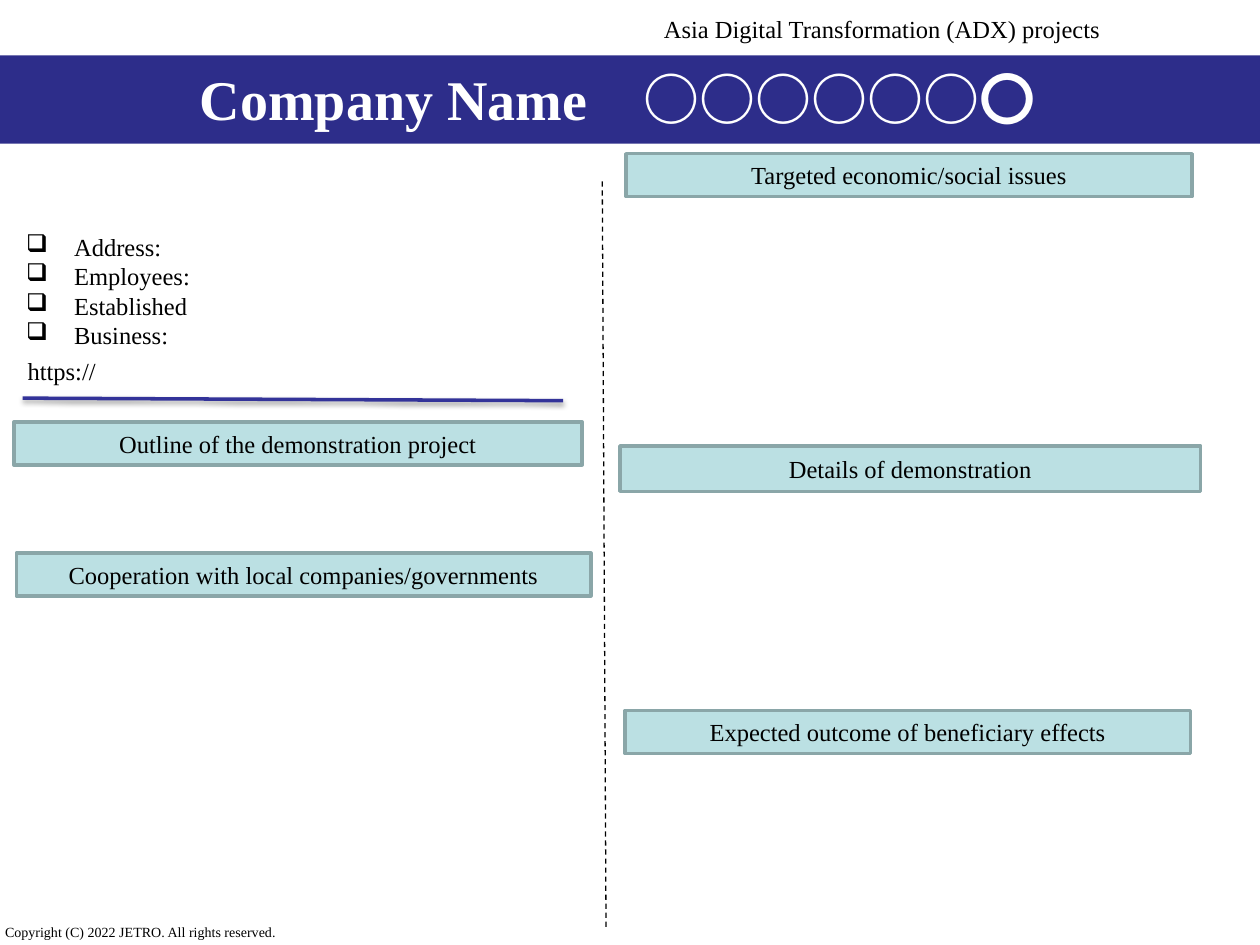
from lxml import etree
from pptx import Presentation
from pptx.dml.color import RGBColor
from pptx.enum import dml, shapes, text
from pptx.oxml.ns import qn
from pptx.util import Inches, Pt

COLORS = {"band": "2D2D8A", "rule": "333399", "box": "BBE0E3", "edge": "8AA6A8",
          "ink": "000000", "white": "FFFFFF"}
LATIN, CJK = "Times New Roman", "Noto Sans CJK JP"
HEADINGS = [
    ("Outline of the demonstration project", (0.11, 3.35, 4.51, 0.34)),
    ("Cooperation with local companies/governments", (0.13, 4.39, 4.56, 0.34)),
    ("Targeted economic/social issues", (4.97, 1.22, 4.49, 0.34)),
    ("Details of demonstration", (4.92, 3.54, 4.61, 0.36)),
    ("Expected outcome of beneficiary effects", (4.96, 5.64, 4.49, 0.34)),
]
FACTS = ["Address:", "Employees:", "Established", "Business:"]


def rgb(name):
    return RGBColor.from_string(COLORS[name])


def inches(box):
    return [Inches(v) for v in box]


def add_run(p, words, color="ink", **font):
    r = p.add_run()
    r.text = words
    r.font.color.rgb = rgb(color)
    for name, value in ({"name": LATIN, "size": Pt(14)} | font).items():
        setattr(r.font, name, value)
    return r


def add_text(s, box, lines, wrap=True, **font):
    tf = s.shapes.add_textbox(*inches(box)).text_frame
    tf.word_wrap = wrap
    for i, line in enumerate(lines):
        p = tf.add_paragraph() if i else tf.paragraphs[0]
        add_run(p, line, **font)
    return tf


def add_rect(s, box, fill):
    sp = s.shapes.add_shape(shapes.MSO_SHAPE.RECTANGLE, *inches(box))
    sp.shadow.inherit = False
    sp.fill.solid()
    sp.fill.fore_color.rgb = rgb(fill)
    return sp


def add_heading(s, box, words):
    sp = add_rect(s, box, "box")
    sp.line.color.rgb = rgb("edge")
    sp.line.width = Pt(2)
    p = sp.text_frame.paragraphs[0]
    p.alignment = text.PP_ALIGN.CENTER
    add_run(p, words)


def add_line(s, ends, color, width):
    """Return the line and its empty effect list."""
    line = s.shapes.add_connector(shapes.MSO_CONNECTOR.STRAIGHT, *inches(ends))
    line.line.color.rgb = rgb(color)
    line.line.width = Pt(width)
    return line, etree.SubElement(line.element.spPr, qn("a:effectLst"))


def add_title_band(s, box):
    left, top, width, height = box
    band = add_rect(s, box, "band")
    band.line.fill.background()
    title = s.shapes.title
    title.element.addprevious(band.element)
    title.left, title.top, title.width, title.height = inches(
        (left + 0.56, top - 0.01, width - 1.31, height))
    tf = title.text_frame
    for name, value in {"word_wrap": True, "auto_size": text.MSO_AUTO_SIZE.NONE,
                        "vertical_anchor": text.MSO_ANCHOR.MIDDLE}.items():
        setattr(tf, name, value)
    p = tf.paragraphs[0]
    p.alignment = text.PP_ALIGN.CENTER
    for words, face in (("Company Name　", LATIN), ("○○○○○○〇", CJK)):
        r = add_run(p, words, "white", name=face, size=Pt(32), bold=True)
        etree.SubElement(r.font._element, qn("a:ea"), typeface=CJK)


def add_profile(s, left, top):
    """Company facts, web address and the rule below them."""
    facts = add_text(s, (left, top, 3.13, 1.04), FACTS)
    for p in facts.paragraphs:
        pPr = p._p.get_or_add_pPr()
        pPr.set("marL", str(Inches(0.38)))
        pPr.set("indent", str(-Inches(0.38)))
        etree.SubElement(pPr, qn("a:buChar"), char="❑")
    add_text(s, (left + 0.01, top + 0.99, 0.75, 0.57), ["https://"], wrap=False)
    _, effects = add_line(s, (left + 0.07, top + 1.37, left + 4.36, top + 1.39), "rule", 2)
    shadow = etree.SubElement(effects, qn("a:outerShdw"), blurRad=str(Pt(3.1)),
                              dist=str(Pt(1.6)), dir="5400000", rotWithShape="0")
    color = etree.SubElement(shadow, qn("a:srgbClr"), val=COLORS["ink"])
    etree.SubElement(color, qn("a:alpha"), val="38000")


def add_copyright(s, box):
    tf = add_text(s, box, ["Copyright (C) 2022 JETRO. All rights reserved."], size=Pt(8))
    tf.vertical_anchor = text.MSO_ANCHOR.BOTTOM
    for side in ("left", "top", "right", "bottom"):
        setattr(tf, f"margin_{side}", Inches(0.04))


def main():
    prs = Presentation()
    prs.slide_width, prs.slide_height = Inches(10), Inches(7.5)
    s = prs.slides.add_slide(prs.slide_layouts[5])
    add_copyright(s, (0, 7.25, 3.17, 0.25))
    add_title_band(s, (0, 0.44, 10, 0.7))
    add_text(s, (5.17, 0.06, 4.08, 0.34), ["Asia Digital Transformation (ADX) projects"],
             wrap=False)
    add_profile(s, 0.11, 1.79)
    divider, _ = add_line(s, (4.78, 1.44, 4.81, 7.37), "ink", 0.75)
    divider.line.dash_style = dml.MSO_LINE.DASH
    for words, box in HEADINGS:
        add_heading(s, box, words)
    prs.save("out.pptx")


if __name__ == "__main__":
    main()
